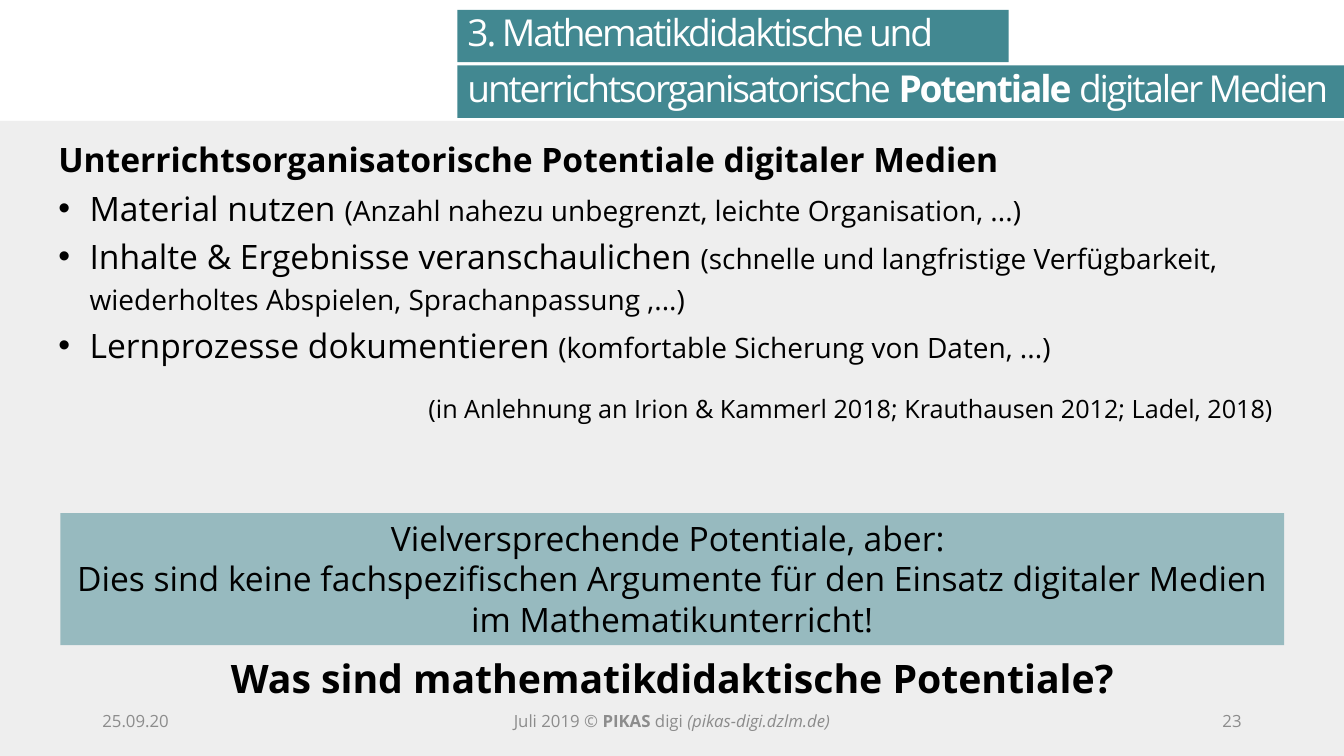
import pptx
import pptx.util
import pptx.dml.color
import pptx.enum.shapes
import pptx.enum.text
import pptx.oxml.ns
import lxml.etree
from dataclasses import dataclass

Cm = pptx.util.Cm
Pt = pptx.util.Pt
ALIGN = pptx.enum.text.PP_ALIGN
ANCHOR = pptx.enum.text.MSO_ANCHOR


@dataclass(frozen=True)
class Theme:
    font: str = "Open Sans"
    teal: str = "428891"
    panel: str = "EEEEEE"
    ink: str = "000000"
    light: str = "FFFFFF"
    muted: str = "8C8C8C"
    title: float = 26.5
    question: float = 28
    body: float = 24
    detail: float = 20
    source: float = 18
    footer: float = 12


THEME = Theme()

TITLE_BARS = [
    (13.89, [("3. Mathematikdidaktische und", "")]),
    (22.34, [("unterrichtsorganisatorische ", ""), ("Potentiale", "b"),
             (" digitaler Medien", "")]),
]
HEADING = "Unterrichtsorganisatorische Potentiale digitaler Medien"
POTENTIALS = [
    ("Material nutzen ", "(Anzahl nahezu unbegrenzt, leichte Organisation, ...)"),
    ("Inhalte & Ergebnisse veranschaulichen ",
     "(schnelle und langfristige Verfügbarkeit, wiederholtes Abspielen, Sprachanpassung ,...)"),
    ("Lernprozesse dokumentieren ", "(komfortable Sicherung von Daten, ...)"),
]
SOURCES = "(in Anlehnung an Irion & Kammerl 2018; Krauthausen 2012; Ladel, 2018)"
CALLOUT = [
    "Vielversprechende Potentiale, aber: ",
    "Dies sind keine fachspezifischen Argumente für den Einsatz digitaler Medien im Mathematikunterricht!",
]
QUESTION = "Was sind mathematikdidaktische Potentiale?"
FOOTERS = [
    (2.33, 7.62, ALIGN.LEFT, [("25.09.20", "")]),
    (11.22, 11.43, ALIGN.CENTER, [("Juli 2019 © ", ""), ("PIKAS ", "b"), ("digi ", ""),
                                  ("(pikas-digi.dzlm.de)", "i")]),
    (23.92, 7.62, ALIGN.RIGHT, [("23", "")]),
]


def color(value):
    return pptx.dml.color.RGBColor.from_string(value)


def add_bar(page, area, fill):
    bar = page.shapes.add_shape(pptx.enum.shapes.MSO_SHAPE.RECTANGLE, *map(Cm, area))
    bar.shadow.inherit = False
    bar.fill.solid()
    bar.fill.fore_color.rgb = color(fill)
    bar.line.fill.background()
    return bar


def add_box(page, area):
    return page.shapes.add_textbox(*map(Cm, area))


def prepare(box, anchor=ANCHOR.TOP):
    frame = box.text_frame
    frame.word_wrap = True
    frame.vertical_anchor = anchor
    return frame


def add_span(para, text, size, ink=THEME.ink, style=""):
    span = para.add_run()
    span.text = text
    span.font.name = THEME.font
    span.font.size = Pt(size)
    span.font.bold = "b" in style
    span.font.italic = "i" in style
    span.font.color.rgb = color(ink)
    return span


def add_bullet(para, indent):
    properties = para._p.get_or_add_pPr()
    properties.set("marL", str(Cm(indent)))
    properties.set("indent", str(-Cm(indent)))
    for tag, key, value in (("a:buFont", "typeface", "Arial"), ("a:buChar", "char", "•")):
        item = lxml.etree.SubElement(properties, pptx.oxml.ns.qn(tag))
        item.set(key, value)


def add_title(page):
    for row, (width, parts) in enumerate(TITLE_BARS):
        bar = add_bar(page, (11.53, 0.25 + 1.4 * row, width, 1.32), THEME.teal)
        para = prepare(bar).paragraphs[0]
        para.alignment = ALIGN.LEFT
        para.line_spacing = 0.9
        for text, style in parts:
            span = add_span(para, text, THEME.title, THEME.light, style)
            span._r.get_or_add_rPr().set("spc", "-150")


def add_potentials(page):
    frame = prepare(add_box(page, (1.22, 3.18, 31.12, 8.81)))
    heading = frame.paragraphs[0]
    heading.line_spacing = 1.2
    add_span(heading, HEADING, THEME.body, style="b")
    for name, detail in POTENTIALS:
        para = frame.add_paragraph()
        para.line_spacing = 1.2
        add_bullet(para, 0.79)
        add_span(para, name, THEME.body)
        add_span(para, detail, THEME.detail)
    para = frame.add_paragraph()
    para.alignment = ALIGN.RIGHT
    para.line_spacing = 1.2
    para.space_before = Pt(16)
    add_span(para, SOURCES, THEME.source)


def add_callout(page):
    callout = add_bar(page, (1.52, 12.93, 30.84, 3.33), THEME.teal)
    tint = callout.fill._xPr.find(".//" + pptx.oxml.ns.qn("a:srgbClr"))
    lxml.etree.SubElement(tint, pptx.oxml.ns.qn("a:alpha")).set("val", "50000")
    para = prepare(callout).paragraphs[0]
    para.alignment = ALIGN.CENTER
    for row, text in enumerate(CALLOUT):
        if row:
            para.add_line_break()
        add_span(para, text, THEME.body)


def add_question(page):
    para = prepare(add_box(page, (4.95, 16.36, 23.98, 1.45))).paragraphs[0]
    para.alignment = ALIGN.CENTER
    add_span(para, QUESTION, THEME.question, style="b")


def add_footers(page):
    for left, width, alignment, parts in FOOTERS:
        box = add_box(page, (left, 17.65, width, 1.02))
        para = prepare(box, ANCHOR.MIDDLE).paragraphs[0]
        para.alignment = alignment
        for text, style in parts:
            add_span(para, text, THEME.footer, THEME.muted, style)


def main():
    deck = pptx.Presentation()
    deck.slide_width, deck.slide_height = Cm(33.87), Cm(19.05)
    page = deck.slides.add_slide(deck.slide_layouts[6])
    add_bar(page, (0, 3.05, 33.87, 16), THEME.panel)
    add_footers(page)
    add_callout(page)
    add_potentials(page)
    add_question(page)
    add_title(page)
    deck.save("out.pptx")


if __name__ == "__main__":
    main()
